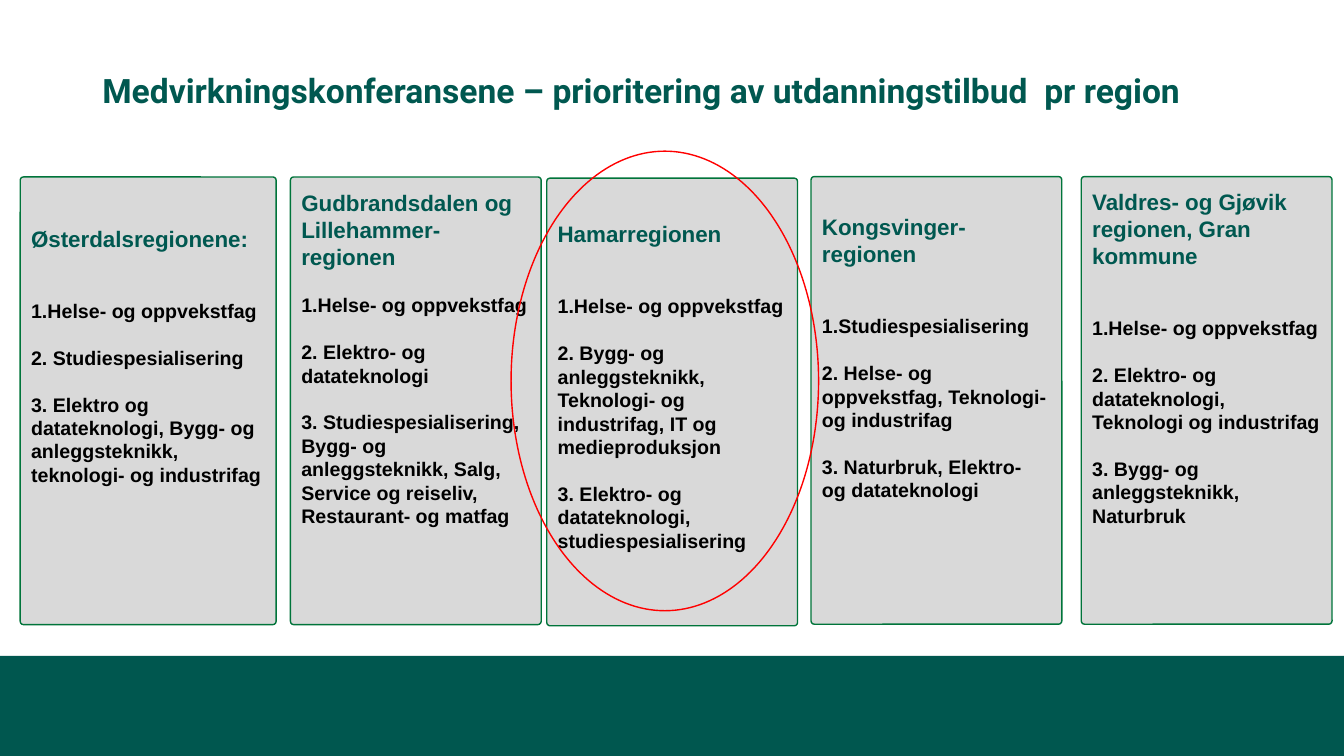
from dataclasses import dataclass

import pptx
import pptx.dml.color
import pptx.enum.shapes
import pptx.enum.text
import pptx.util

Cm = pptx.util.Cm
Pt = pptx.util.Pt
Shapes = pptx.enum.shapes.MSO_SHAPE

GREEN = "005850"
HEADING_LINE = 19.3
ITEM_LINE = 16.75
CARD_HEIGHT = 11.28


@dataclass
class Region:
    heading: str
    items: list[str]
    left: float
    top: float
    text_top: float
    width: float = 6.32
    gap_lines: int = 2


REGIONS = [
    Region("Østerdalsregionene:", [
        "1.Helse- og oppvekstfag",
        "2. Studiespesialisering",
        "3. Elektro og datateknologi, Bygg- og anleggsteknikk, teknologi- og industrifag",
    ], left=0.51, top=4.46, text_top=1.18, width=6.45),
    Region("Gudbrandsdalen og Lillehammer-regionen", [
        "1.Helse- og oppvekstfag",
        "2. Elektro- og datateknologi",
        "3. Studiespesialisering, Bygg- og anleggsteknikk, Salg, "
        "Service og reiseliv, Restaurant- og matfag",
    ], left=7.32, top=4.46, text_top=0.27, gap_lines=1),
    Region("Hamarregionen", [
        "1.Helse- og oppvekstfag",
        "2. Bygg- og anleggsteknikk, Teknologi- og industrifag, IT og medieproduksjon",
        "3. Elektro- og datateknologi, studiespesialisering",
    ], left=13.78, top=4.49, text_top=1.04),
    Region("Kongsvinger-regionen", [
        "1.Studiespesialisering",
        "2. Helse- og oppvekstfag, Teknologi- og industrifag",
        "3. Naturbruk, Elektro- og datateknologi",
    ], left=20.44, top=4.45, text_top=0.9),
    Region("Valdres- og Gjøvik regionen, Gran kommune", [
        "1.Helse- og oppvekstfag",
        "2. Elektro- og datateknologi, Teknologi og industrifag",
        "3. Bygg- og anleggsteknikk, Naturbruk",
    ], left=27.25, top=4.45, text_top=0.27),
]


def colour(value: str) -> pptx.dml.color.RGBColor:
    return pptx.dml.color.RGBColor.from_string(value)


def style_font(para, size: float, value: str, name: str = "Arial") -> None:
    para.font.name = name
    para.font.size = Pt(size)
    para.font.bold = True
    para.font.color.rgb = colour(value)


def add_shape(page, kind, left: float, top: float, width: float, height: float,
              fill: str | None = None, line: str | None = None):
    """Add a flat shape; without a fill or line colour, that part is left out."""
    shape = page.shapes.add_shape(kind, Cm(left), Cm(top), Cm(width), Cm(height))
    shape.shadow.inherit = False
    if fill:
        shape.fill.solid()
        shape.fill.fore_color.rgb = colour(fill)
    else:
        shape.fill.background()
    if line:
        shape.line.color.rgb = colour(line)
        shape.line.width = Pt(1)
    else:
        shape.line.fill.background()
    return shape


def add_title(page, text: str) -> None:
    box = page.shapes.add_textbox(Cm(2.33), Cm(1.14), Cm(29.21), Cm(2.41))
    frame = box.text_frame
    frame.word_wrap = True
    frame.vertical_anchor = pptx.enum.text.MSO_ANCHOR.MIDDLE
    para = frame.paragraphs[0]
    para.text = text
    para.line_spacing = 0.9
    style_font(para, 24, GREEN, "Roboto")


def add_region(page, region: Region) -> None:
    card = add_shape(page, Shapes.ROUNDED_RECTANGLE, region.left, region.top,
                     region.width, CARD_HEIGHT, "D9D9D9", "00743A")
    card.adjustments[0] = 0.013
    frame = card.text_frame
    frame.word_wrap = True
    frame.vertical_anchor = pptx.enum.text.MSO_ANCHOR.TOP
    frame.margin_top = Cm(region.text_top)

    heading = frame.paragraphs[0]
    heading.text = region.heading
    heading.alignment = pptx.enum.text.PP_ALIGN.LEFT
    heading.line_spacing = Pt(HEADING_LINE)
    style_font(heading, 16, GREEN)

    for index, item in enumerate(region.items):
        para = frame.add_paragraph()
        para.text = item
        para.alignment = pptx.enum.text.PP_ALIGN.LEFT
        para.line_spacing = Pt(ITEM_LINE)
        para.space_before = Pt(ITEM_LINE * (1 if index else region.gap_lines))
        style_font(para, 14, "000000")


def main() -> None:
    deck = pptx.Presentation()
    deck.slide_width = Cm(33.87)
    deck.slide_height = Cm(19.05)
    page = deck.slides.add_slide(deck.slide_layouts[6])

    add_shape(page, Shapes.RECTANGLE, 0, 16.53, 33.87, 2.52, fill="00574F")
    add_title(page, "Medvirkningskonferansene – prioritering av utdanningstilbud  pr region")
    for region in REGIONS:
        add_region(page, region)
    add_shape(page, Shapes.OVAL, 12.88, 3.81, 7.75, 11.58, line="FF0000")

    deck.save("out.pptx")


if __name__ == "__main__":
    main()
